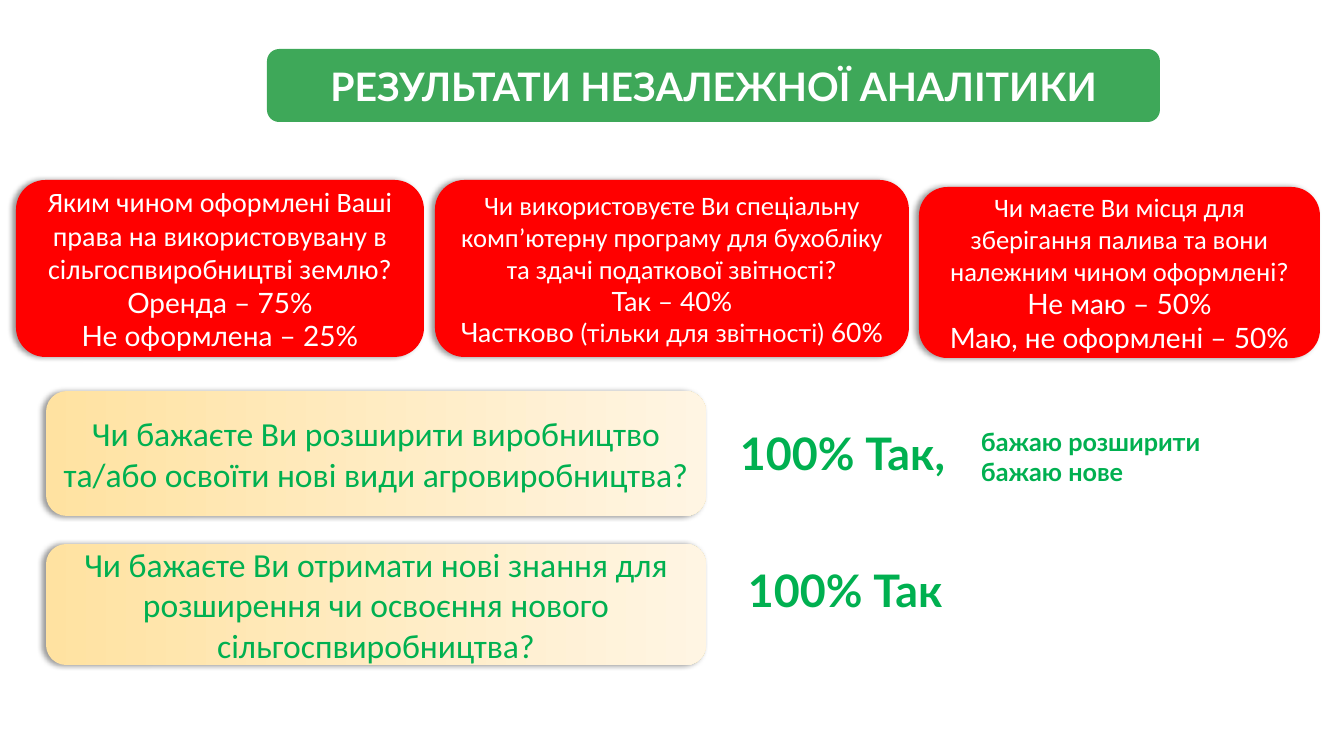
import dataclasses

import lxml.etree
import pptx
import pptx.dml.color
import pptx.enum.shapes
import pptx.enum.text
import pptx.oxml.ns
import pptx.util

EMU_PER_PX = 914400 / 100.8
ALIGN = pptx.enum.text.PP_ALIGN
ANCHOR = pptx.enum.text.MSO_ANCHOR
FIT = pptx.enum.text.MSO_AUTO_SIZE


@dataclasses.dataclass(frozen=True)
class Theme:
    banner: str = "3EA859"
    card: str = "FF0000"
    light: str = "FFFFFF"
    accent: str = "00B050"
    panel: tuple = ("FFE2A1", "FFF5E3")
    heading_font: str = "Lato"
    body_font: str = "Calibri"
    title: int = 28
    question: int = 24
    result: int = 32
    detail: int = 18


THEME = Theme()

# box, then paragraphs; each paragraph is a font and its (text, size) runs
SURVEY_CARDS = [
    ((16, 180, 408, 177), [
        (THEME.body_font, [("Яким чином оформлені Ваші права на використовувану в "
                            "сільгоспвиробництві землю?", 20)]),
        (THEME.heading_font, [("Оренда – 75%", 20)]),
        (THEME.heading_font, [("Не оформлена – 25%", 20)]),
    ]),
    ((435, 180, 474, 177), [
        (THEME.body_font, [("Чи використовуєте Ви спеціальну комп’ютерну програму "
                            "для бухобліку та здачі податкової звітності?", 19)]),
        (THEME.heading_font, [("Так – 40%", 19)]),
        (THEME.heading_font, [("Частково ", 19), ("(тільки для звітності) ", 18),
                              ("60%", 19)]),
    ]),
    ((919, 187, 401, 171), [
        (THEME.body_font, [("Чи маєте Ви місця для зберігання палива та вони "
                            "належним чином оформлені?", 19)]),
        (THEME.heading_font, [("Не маю – 50%", 20)]),
        (THEME.heading_font, [("Маю, не оформлені – 50%", 20)]),
    ]),
]

# box, question, answer, details
INTENTIONS = [
    ((46, 391, 1222, 125),
     "Чи бажаєте Ви розширити виробництво та/або освоїти нові види агровиробництва?",
     (684, 30, "100% Так,"), ["бажаю розширити", "бажаю нове"]),
    ((46, 544, 1222, 121),
     "Чи бажаєте Ви отримати нові знання для розширення чи освоєння нового "
     "сільгоспвиробництва?",
     (692, 14, "100% Так"), []),
]


def emu(*lengths):
    return [pptx.util.Emu(round(n * EMU_PER_PX)) for n in lengths]


def rgb(value):
    return pptx.dml.color.RGBColor.from_string(value)


def add_rounded(s, box):
    sp = s.shapes.add_shape(
        pptx.enum.shapes.MSO_SHAPE.ROUNDED_RECTANGLE, *emu(*box))
    sp.line.fill.background()
    sp.shadow.inherit = False
    return sp


def cast_shadow(sp):
    """Give the shape a soft shadow falling to its left."""
    qn = pptx.oxml.ns.qn
    effects = sp._element.spPr.find(qn("a:effectLst"))
    shadow = lxml.etree.SubElement(
        effects, qn("a:outerShdw"), blurRad=str(pptx.util.Pt(4)),
        dist=str(pptx.util.Pt(3)), dir="10800000", algn="r", rotWithShape="0")
    color = lxml.etree.SubElement(shadow, qn("a:srgbClr"), val="000000")
    lxml.etree.SubElement(color, qn("a:alpha"), val="40000")


def write(tf, paragraphs, color, align, bold=False):
    tf.word_wrap = True
    for i, (font, runs) in enumerate(paragraphs):
        p = tf.add_paragraph() if i else tf.paragraphs[0]
        p.alignment = align
        p.font.name = font
        p.font.bold = bold
        p.font.color.rgb = rgb(color)
        same_size = len({size for _, size in runs}) == 1
        if same_size:
            p.font.size = pptx.util.Pt(runs[0][1])
        for text, size in runs:
            r = p.add_run()
            r.text = text
            if not same_size:
                r.font.size = pptx.util.Pt(size)


def add_title(s, box, text):
    """Lay the title placeholder over a coloured banner."""
    banner = add_rounded(s, box)
    banner.fill.solid()
    banner.fill.fore_color.rgb = rgb(THEME.banner)
    title = s.shapes.title
    title.left, title.top, title.width, title.height = emu(*box)
    banner._element.addnext(title._element)
    tf = title.text_frame
    tf.auto_size = FIT.NONE
    tf.vertical_anchor = ANCHOR.MIDDLE
    write(tf, [(THEME.heading_font, [(text, THEME.title)])],
          THEME.light, ALIGN.CENTER, bold=True)


def add_survey_card(s, box, paragraphs):
    sp = add_rounded(s, box)
    sp.fill.solid()
    sp.fill.fore_color.rgb = rgb(THEME.card)
    cast_shadow(sp)
    sp.text_frame.vertical_anchor = ANCHOR.MIDDLE
    write(sp.text_frame, paragraphs, THEME.light, ALIGN.CENTER)


def add_answer(s, box, lines, size):
    tf = s.shapes.add_textbox(*emu(*box)).text_frame
    write(tf, [(THEME.heading_font, [(line, size)]) for line in lines],
          THEME.accent, ALIGN.LEFT, bold=True)
    tf.auto_size = FIT.SHAPE_TO_FIT_TEXT


def add_intention(s, box, question, answer, details):
    """Place a question panel with its answer and details to the right."""
    left, top, width, height = box
    sp = add_rounded(s, (left, top, 660, height))
    sp.fill.gradient()
    sp.fill.gradient_angle = 0
    for stop, color in zip(sp.fill.gradient_stops, THEME.panel):
        stop.color.rgb = rgb(color)
    cast_shadow(sp)
    sp.text_frame.vertical_anchor = ANCHOR.MIDDLE
    write(sp.text_frame, [(THEME.body_font, [(question, THEME.question)])],
          THEME.accent, ALIGN.CENTER)

    dx, dy, text = answer
    add_answer(s, (left + dx, top + dy, 240, 65), [text], THEME.result)
    if details:
        add_answer(s, (left + width - 297, top + dy, 297, 72),
                   details, THEME.detail)


def main():
    prs = pptx.Presentation()
    prs.slide_width, prs.slide_height = emu(1344, 756)
    s = prs.slides.add_slide(prs.slide_layouts.get_by_name("Title Only"))
    add_title(s, (267, 49, 893, 73), "РЕЗУЛЬТАТИ НЕЗАЛЕЖНОЇ АНАЛІТИКИ")
    for box, paragraphs in SURVEY_CARDS:
        add_survey_card(s, box, paragraphs)
    for intention in INTENTIONS:
        add_intention(s, *intention)
    prs.save("out.pptx")


if __name__ == "__main__":
    main()
